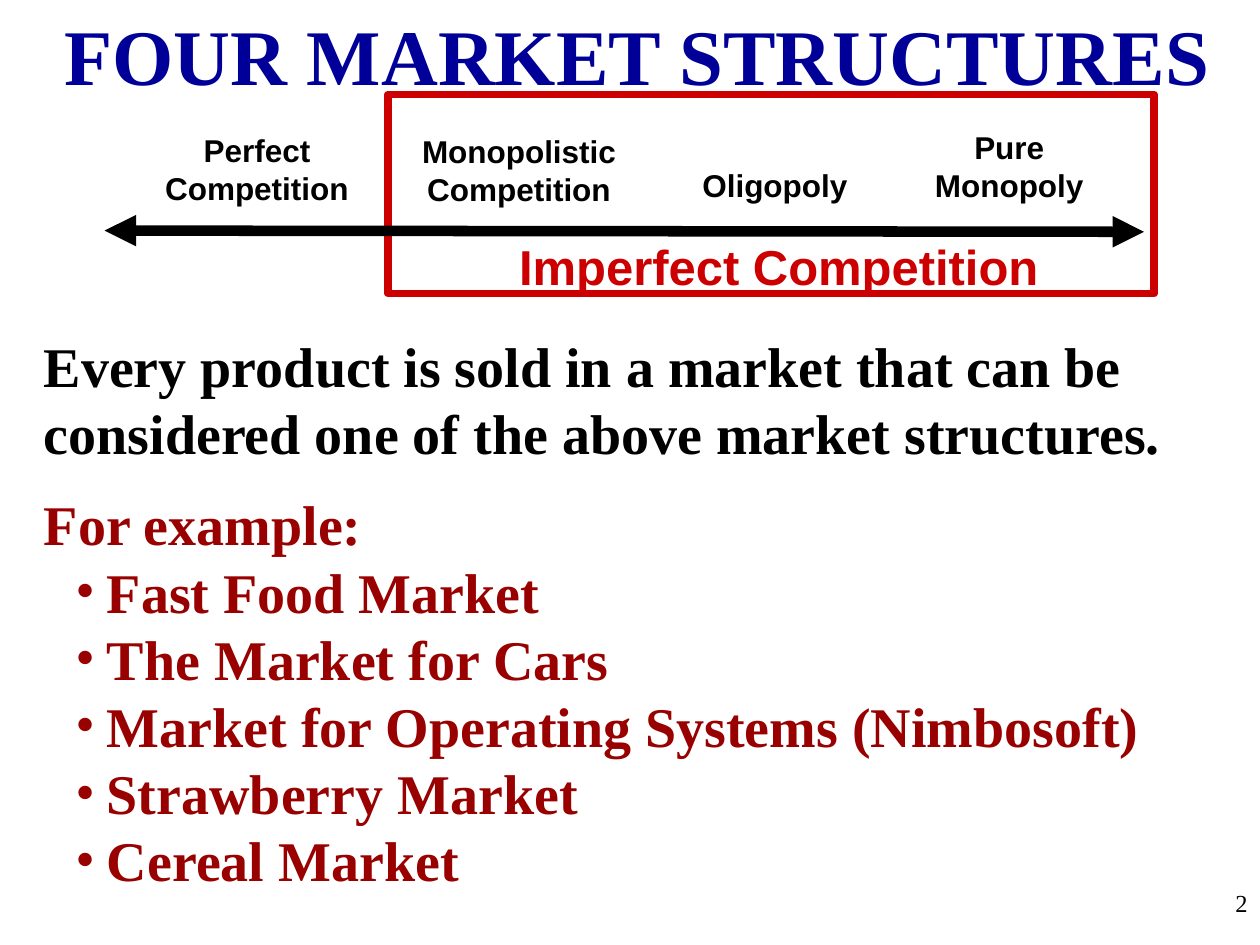
from lxml.etree import SubElement
from pptx import Presentation
from pptx.dml.color import RGBColor
from pptx.enum.shapes import MSO_CONNECTOR as Connector, MSO_SHAPE as Shape
from pptx.enum.text import MSO_ANCHOR as Anchor, MSO_AUTO_SIZE as AutoSize, PP_ALIGN as Align
from pptx.oxml.ns import qn
from pptx.util import Inches, Pt

SLIDE_WIDTH, SLIDE_HEIGHT = Inches(10), Inches(7.5)
COLUMN, ROW = SLIDE_WIDTH / 100, SLIDE_HEIGHT / 75
BLACK, NAVY, RED, MAROON = "000000", "000099", "CC0000", "990000"
SANS, SERIF = "Arial", "Times New Roman"

LABELS = [
    (["Perfect", "Competition"], 20.4, 16.9, 16.6),
    (["Monopolistic", "Competition"], 41.2, 17, 17.4),
    (["Oligopoly"], 61.5, 16.7, 13.5),
    (["Pure", "Monopoly"], 80.1, 16.7, 13.8),
]
EXAMPLES = [
    "Fast Food Market",
    "The Market for Cars",
    "Market for Operating Systems (Nimbosoft)",
    "Strawberry Market",
    "Cereal Market",
]


def color(value):
    return RGBColor.from_string(value)


def grid(left, top, width, height):
    return [round(left * COLUMN), round(top * ROW), round(width * COLUMN), round(height * ROW)]


def apply(target, values):
    for name, value in values.items():
        setattr(target, name, value)


def format_frame(frame, wrap):
    apply(frame, {"word_wrap": wrap, "auto_size": AutoSize.NONE, "vertical_anchor": Anchor.TOP})


def write_line(paragraph, text, size, font, fill, bold=True, align=Align.LEFT):
    paragraph.alignment = align
    run = paragraph.add_run()
    run.text = text
    apply(run.font, {"size": Pt(size), "name": font, "bold": bold})
    run.font.color.rgb = color(fill)


def add_paragraph(frame):
    return frame.add_paragraph() if frame.text else frame.paragraphs[0]


def add_text(slide, box, lines, size, font, fill, wrap=False, **style):
    frame = slide.shapes.add_textbox(*grid(*box)).text_frame
    format_frame(frame, wrap)
    for text in lines:
        write_line(add_paragraph(frame), text, size, font, fill, **style)
    return frame


def add_title(slide, text):
    title = slide.shapes.title
    apply(title, dict(zip(("left", "top", "width", "height"), grid(4.1, 0, 93, 8.5))))
    format_frame(title.text_frame, False)
    write_line(title.text_frame.paragraphs[0], text, 45, SERIF, NAVY)


def add_bullet(paragraph):
    properties = paragraph._p.get_or_add_pPr()
    properties.set("marL", str(Inches(0.5)))
    properties.set("indent", str(-Inches(0.25)))
    SubElement(properties, qn("a:buFont")).set("typeface", SERIF)
    SubElement(properties, qn("a:buChar")).set("char", "•")


def add_frame_box(slide):
    box = slide.shapes.add_shape(Shape.RECTANGLE, *grid(30.8, 7.5, 60.8, 15.8))
    box.shadow.inherit = False
    box.fill.background()
    box.line.color.rgb = color(RED)
    box.line.width = Pt(4.5)


def add_spectrum(slide):
    ends = grid(8.3, 18.3, 90.8, 18.4)
    arrow = slide.shapes.add_connector(Connector.STRAIGHT, *ends)
    arrow.line.color.rgb = color(BLACK)
    arrow.line.width = Pt(6)
    for end in ("a:headEnd", "a:tailEnd"):
        SubElement(arrow.line._get_or_add_ln(), qn(end)).set("type", "triangle")
    SubElement(arrow._element.spPr, qn("a:effectLst"))


def add_labels(slide):
    for lines, center, bottom, width in LABELS:
        height = 1 + 3 * len(lines)
        box = (center - width / 2, bottom - height, width, height)
        add_text(slide, box, lines, 18, SANS, BLACK, align=Align.CENTER)


def add_body(slide):
    statement = ("Every product is sold in a market that can be "
                 "considered one of the above market structures.")
    frame = add_text(slide, (2.5, 25.8, 93.3, 48), [statement], 32, SERIF, BLACK, wrap=True)
    heading = frame.add_paragraph()
    heading.space_before = Pt(13.8)
    write_line(heading, "For example:", 32, SERIF, MAROON)
    for example in EXAMPLES:
        paragraph = frame.add_paragraph()
        write_line(paragraph, example, 32, SERIF, MAROON)
        add_bullet(paragraph)


def main():
    presentation = Presentation()
    apply(presentation, {"slide_width": SLIDE_WIDTH, "slide_height": SLIDE_HEIGHT})
    slide = presentation.slides.add_slide(presentation.slide_layouts[5])
    add_title(slide, "FOUR MARKET STRUCTURES")
    add_labels(slide)
    add_body(slide)
    add_text(slide, (40.2, 18.3, 43.2, 5.6), ["Imperfect Competition"], 28, SANS, RED,
             align=Align.CENTER)
    add_frame_box(slide)
    add_text(slide, (79.2, 70, 20.8, 5), ["2"], 14, SERIF, BLACK, wrap=True,
             bold=False, align=Align.RIGHT)
    add_spectrum(slide)
    presentation.save("out.pptx")


if __name__ == "__main__":
    main()
